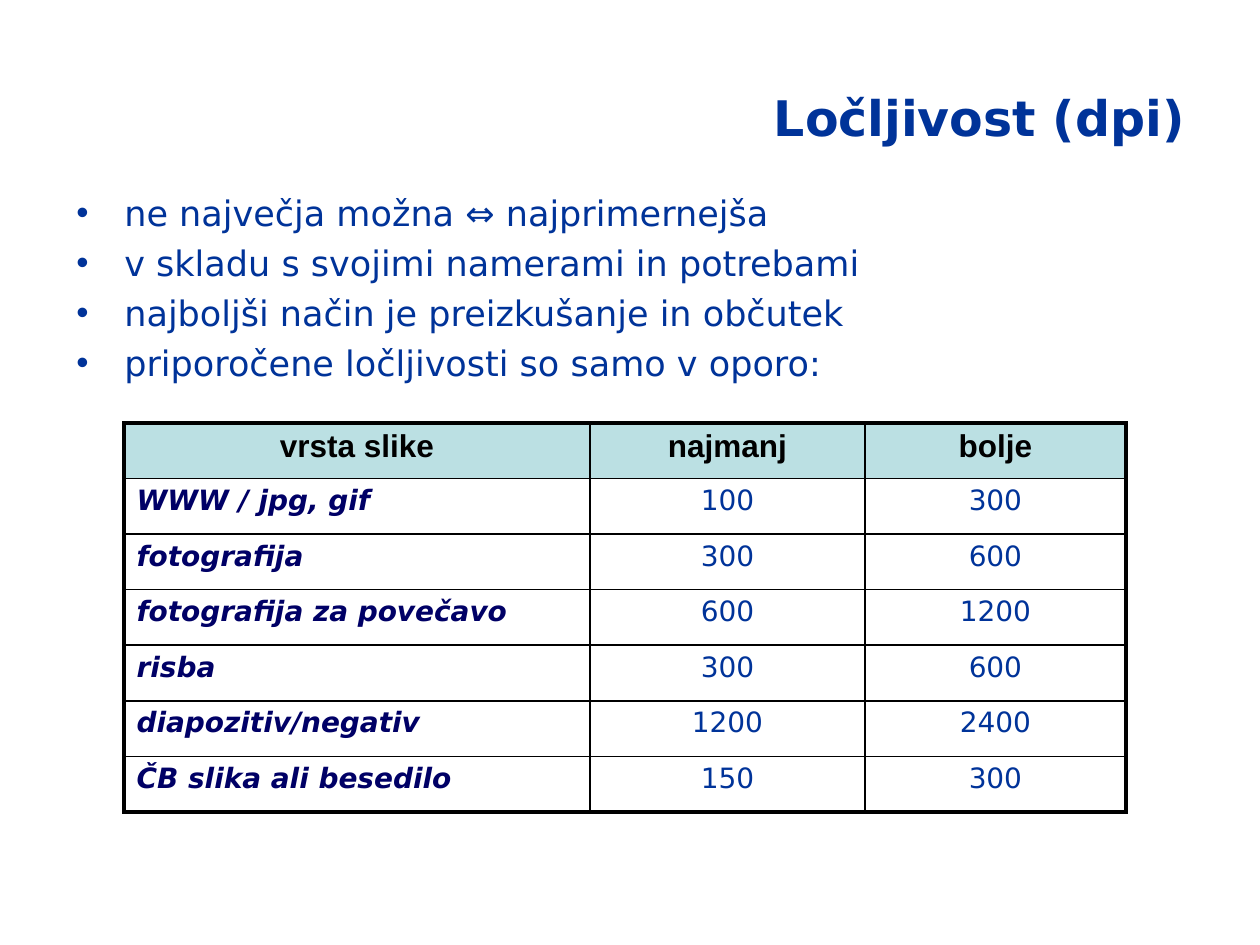
from dataclasses import dataclass

from lxml import etree
from pptx import Presentation
from pptx.dml.color import RGBColor
from pptx.enum.text import MSO_ANCHOR, PP_ALIGN
from pptx.oxml.ns import qn
from pptx.util import Emu, Pt

EMU_PER_PX = 914400 / 126
LEFT, CENTER, RIGHT = PP_ALIGN.LEFT, PP_ALIGN.CENTER, PP_ALIGN.RIGHT
TOP, MIDDLE = MSO_ANCHOR.TOP, MSO_ANCHOR.MIDDLE
BLUE, NAVY, BLACK, WHITE, TEAL = "003399", "000066", "000000", "FFFFFF", "BBE0E3"
THIN, THICK = 1, 2.25


@dataclass(frozen=True)
class TextStyle:
    size: int
    color: str
    font: str = "DejaVu Sans"
    bold: bool = False
    italic: bool = False
    align: PP_ALIGN = LEFT


TITLE = TextStyle(28, BLUE, bold=True, align=RIGHT)
BULLET = TextStyle(20, BLUE)
HEADER = TextStyle(18, BLACK, "Arial", bold=True, align=CENTER)
ROW_LABEL = TextStyle(16, NAVY, bold=True, italic=True)
VALUE = TextStyle(16, BLUE, align=CENTER)

BULLETS = [
    "ne največja možna ⇔ najprimernejša",
    "v skladu s svojimi namerami in potrebami",
    "najboljši način je preizkušanje in občutek",
    "priporočene ločljivosti so samo v oporo:",
]
ROWS = [
    ("vrsta slike", "najmanj", "bolje"),
    ("WWW / jpg, gif", "100", "300"),
    ("fotografija", "300", "600"),
    ("fotografija za povečavo", "600", "1200"),
    ("risba", "300", "600"),
    ("diapozitiv/negativ", "1200", "2400"),
    ("ČB slika ali besedilo", "150", "300"),
]
COLUMN_WIDTHS = (466, 275, 261)
TABLE_HEIGHT = 389


def px(length: int) -> Emu:
    return Emu(round(length * EMU_PER_PX))


def rgb(color: str) -> RGBColor:
    return RGBColor.from_string(color)


def write(para, text: str, style: TextStyle) -> None:
    para.alignment = style.align
    span = para.add_run()
    span.text = text
    font = span.font
    font.name, font.size = style.font, Pt(style.size)
    font.bold, font.italic = style.bold, style.italic
    font.color.rgb = rgb(style.color)


def add_box(page, left: int, top: int, width: int, height: int, anchor):
    box = page.shapes.add_textbox(px(left), px(top), px(width), px(height))
    box.text_frame.word_wrap = True
    box.text_frame.vertical_anchor = anchor
    return box


def add_bullet(para, indent: int) -> None:
    properties = para._p.get_or_add_pPr()
    properties.set("marL", str(px(indent)))
    properties.set("indent", str(-px(indent)))
    etree.SubElement(properties, qn("a:buFont"), typeface="Arial")
    etree.SubElement(properties, qn("a:buChar"), char="•")


def set_border(cell, side: str, points: float) -> None:
    line = etree.SubElement(cell._tc.get_or_add_tcPr(), qn(f"a:ln{side}"), w=str(Pt(points)))
    fill = etree.SubElement(line, qn("a:solidFill"))
    etree.SubElement(fill, qn("a:srgbClr"), val=BLACK)


def add_resolution_table(page, left: int, top: int) -> None:
    last_row, last_column = len(ROWS) - 1, len(COLUMN_WIDTHS) - 1
    table = page.shapes.add_table(
        len(ROWS), len(COLUMN_WIDTHS), px(left), px(top), px(sum(COLUMN_WIDTHS)), px(TABLE_HEIGHT)
    ).table
    table.first_row = table.horz_banding = False
    for column, width in zip(table.columns, COLUMN_WIDTHS):
        column.width = px(width)

    for r, texts in enumerate(ROWS):
        table.rows[r].height = px(TABLE_HEIGHT) // len(ROWS)
        for c, text in enumerate(texts):
            cell = table.cell(r, c)
            # Thick outer frame, thin inner grid
            outer = {"L": c == 0, "R": c == last_column, "T": r == 0, "B": r == last_row}
            for side, is_outer in outer.items():
                set_border(cell, side, THICK if is_outer else THIN)
            if r == 0:
                style = HEADER
                cell.fill.solid()
                cell.fill.fore_color.rgb = rgb(TEAL)
            else:
                style = ROW_LABEL if c == 0 else VALUE
                cell.fill.background()
            write(cell.text_frame.paragraphs[0], text, style)


def main() -> None:
    deck = Presentation()
    deck.slide_width, deck.slide_height = px(1260), px(945)
    page = deck.slides.add_slide(deck.slide_layouts[6])

    # Title
    title = add_box(page, 63, 38, 1134, 157, MIDDLE)
    write(title.text_frame.paragraphs[0], "Ločljivost (dpi)", TITLE)

    # Bullet list
    body = add_box(page, 64, 185, 1134, 217, TOP)
    body.fill.solid()
    body.fill.fore_color.rgb = rgb(WHITE)
    frame = body.text_frame
    for i, text in enumerate(BULLETS):
        para = frame.add_paragraph() if i else frame.paragraphs[0]
        add_bullet(para, 48)
        if i:
            para.space_before = Pt(4.7)
        write(para, text, BULLET)

    # Recommended resolutions
    add_resolution_table(page, 124, 423)

    deck.save("out.pptx")


if __name__ == "__main__":
    main()
